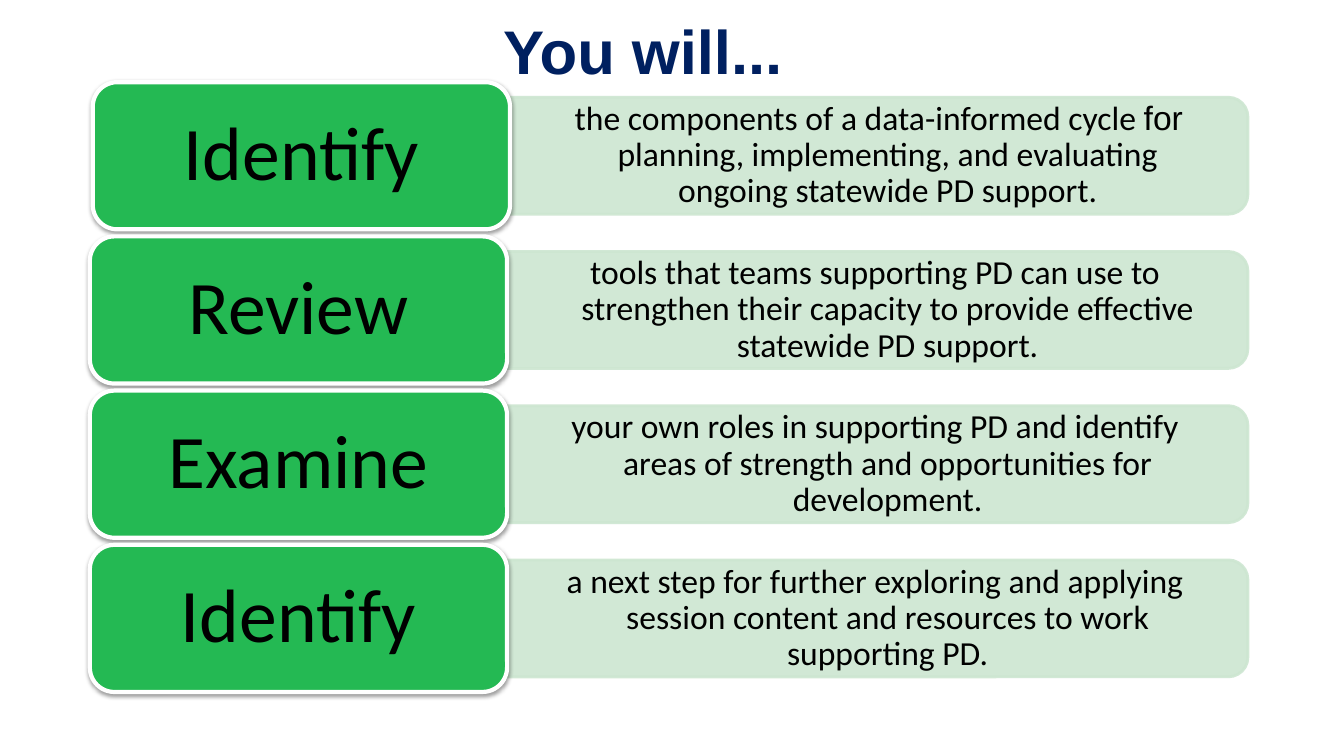
from dataclasses import dataclass

from lxml import etree
from pptx import Presentation
from pptx import util as u
from pptx.dml.color import RGBColor
from pptx.enum import shapes, text
from pptx.oxml.ns import qn


@dataclass(frozen=True)
class Theme:
    title_ink: str = "002060"
    ink: str = "000000"
    card: str = "24B953"
    bar: str = "CDE6D1"
    edge: str = "FFFFFF"
    heading: str = "Arial"
    body: str = "Calibri"
    title_size: int = 44
    verb_size: int = 54
    goal_size: int = 24


def apply(target, values):
    for name, value in values.items():
        setattr(target, name, value)


class GoalSlide:
    def __init__(self, deck, theme):
        self.deck, self.theme = deck, theme
        self.slide = deck.slides.add_slide(deck.slide_layouts[5])

    def box(self, left, middle, width, height):
        across, down = self.deck.slide_width / 100, self.deck.slide_height / 100
        return [round(v) for v in (left * across, (middle - height / 2) * down,
                                   width * across, height * down)]

    def lettering(self, frame, runs, size, color, insets, bold=False):
        side, edge = (u.Inches(inset) for inset in insets)
        apply(frame, {"word_wrap": True, "auto_size": text.MSO_AUTO_SIZE.NONE,
                      "vertical_anchor": text.MSO_ANCHOR.MIDDLE,
                      "margin_left": side, "margin_right": side,
                      "margin_top": edge, "margin_bottom": edge})
        paragraph = frame.paragraphs[0]
        apply(paragraph, {"alignment": text.PP_ALIGN.CENTER, "line_spacing": 0.9})
        for words, face in runs:
            run = paragraph.add_run()
            run.text = words
            apply(run.font, {"name": face, "size": u.Pt(size), "bold": bold})
            run.font.color.rgb = RGBColor.from_string(color)
        return paragraph

    def shape(self, kind, box, fill, line, weight):
        shape = self.slide.shapes.add_shape(kind, *box)
        shape.shadow.inherit = False
        shape.fill.solid()
        shape.fill.fore_color.rgb = RGBColor.from_string(fill)
        shape.line.color.rgb = RGBColor.from_string(line)
        shape.line.width = u.Pt(weight)
        return shape

    def title(self, words):
        heading = self.slide.shapes.title
        apply(heading, dict(zip(("left", "top", "width", "height"),
                                self.box(2.85, 7.27, 90, 8.67))))
        self.lettering(heading.text_frame, [(words, self.theme.heading)],
                       self.theme.title_size, self.theme.title_ink, (0.07, 0.04), True)

    def bar(self, middle):
        left, top, width, height = self.box(37.65, middle, 55.2, 15.47)
        shift = (width - height) // 2
        bar = self.shape(shapes.MSO_SHAPE.ROUND_2_SAME_RECTANGLE,
                         (left + shift, top - shift, height, width),
                         self.theme.bar, self.theme.bar, 2)
        bar.rotation = 90
        for color in bar.element.spPr.iter(qn("a:srgbClr")):
            etree.SubElement(color, qn("a:alpha"), val="90000")

    def goal(self, middle, runs):
        goal = self.slide.shapes.add_textbox(*self.box(37.73, middle, 54.75, 14))
        paragraph = self.lettering(goal.text_frame, runs, self.theme.goal_size,
                                   self.theme.ink, (0.27, 0.14))
        paragraph.level = 1
        indent = u.Inches(0.25)
        properties = paragraph._p.get_or_add_pPr()
        properties.set("marL", str(indent))
        properties.set("indent", str(-indent))

    def card(self, left, middle, verb):
        card = self.shape(shapes.MSO_SHAPE.ROUNDED_RECTANGLE,
                          self.box(left, middle, 31.05, 19.47),
                          self.theme.card, self.theme.edge, 3)
        effects = card.element.spPr.find(qn("a:effectLst"))
        shadow = etree.SubElement(effects, qn("a:outerShdw"), blurRad=str(u.Pt(3.1)),
                                  dist=str(u.Pt(1.6)), dir="5400000", rotWithShape="0")
        color = etree.SubElement(shadow, qn("a:srgbClr"), val=self.theme.ink)
        etree.SubElement(color, qn("a:alpha"), val="38000")
        self.lettering(card.text_frame, [(verb, self.theme.body)],
                       self.theme.verb_size, self.theme.ink, (0.23, 0.11))


def main():
    deck = Presentation()
    apply(deck, {"slide_width": u.Inches(13.33), "slide_height": u.Inches(7.5)})
    theme = Theme()
    page = GoalSlide(deck, theme)
    page.title("You will...")

    goals = [
        ("Identify", 6.9, [
            (" the components of a data-informed cycle ", theme.body),
            ("for ", theme.heading),
            ("planning, implementing, and evaluating ongoing statewide PD support.",
             theme.body)]),
        ("Review", 6.68, [
            ("tools that teams supporting PD can use to strengthen their capacity "
             "to provide effective statewide PD support.", theme.body)]),
        ("Examine", 6.68, [
            ("your own roles in supporting PD and identify areas of strength "
             "and opportunities for development.", theme.body)]),
        ("Identify", 6.68, [
            ("a next step for further exploring and applying session content "
             "and resources to work supporting PD.", theme.body)]),
    ]
    first_row, row_pitch = 20.6, 20.4
    for row, (verb, card_left, runs) in enumerate(goals):
        middle = first_row + row * row_pitch
        page.bar(middle)
        page.goal(middle, runs)
        page.card(card_left, middle, verb)

    deck.save("out.pptx")


if __name__ == "__main__":
    main()
